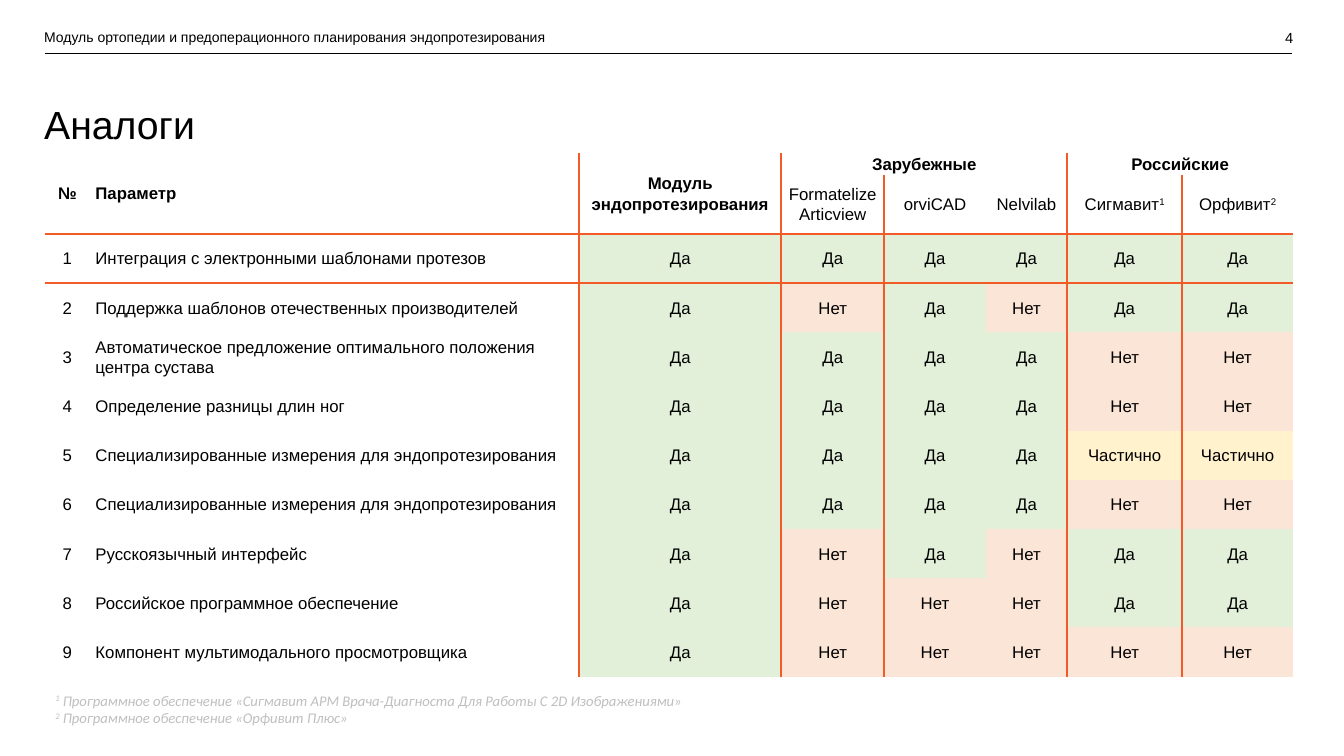
from lxml.etree import SubElement as add_node
from pptx import Presentation
from pptx.dml.color import RGBColor
from pptx.enum.shapes import MSO_CONNECTOR as Connector
from pptx.enum.text import MSO_ANCHOR as Anchor, PP_ALIGN as Align
from pptx.oxml import parse_xml
from pptx.oxml.ns import nsdecls, qn
from pptx.util import Pt

ORANGE = "F25A28"
ANSWERS = {"+": ("Да", "E2F0D9"), "-": ("Нет", "FBE5D6"), "~": ("Частично", "FFF2CC")}

COLUMN_WIDTHS = [31.5, 349.9, 144.3, 73.6, 72.5, 58.2, 82.1, 79.3]
ROW_HEIGHTS = [15.4, 42.1] + [35.15] * 9

# Header cells: row, column, last row, last column, text
HEADERS = [
    (0, 0, 1, 0, "№"),
    (0, 1, 1, 1, "Параметр"),
    (0, 2, 1, 2, "Модуль эндопротезирования"),
    (0, 3, 0, 5, "Зарубежные"),
    (0, 6, 0, 7, "Российские"),
    (1, 3, 1, 3, "Formatelize Articview"),
    (1, 4, 1, 4, "orviCAD"),
    (1, 5, 1, 5, "Nelvilab"),
    (1, 6, 1, 6, "Сигмавит^1"),
    (1, 7, 1, 7, "Орфивит^2"),
]

# One answer sign for each product column
PARAMETERS = [
    ("Интеграция с электронными шаблонами протезов", "++++++"),
    ("Поддержка шаблонов отечественных производителей", "+-+-++"),
    ("Автоматическое предложение оптимального положения центра сустава", "++++--"),
    ("Определение разницы длин ног", "++++--"),
    ("Специализированные измерения для эндопротезирования", "++++~~"),
    ("Специализированные измерения для эндопротезирования", "++++--"),
    ("Русскоязычный интерфейс", "+-+-++"),
    ("Российское программное обеспечение", "+---++"),
    ("Компонент мультимодального просмотровщика", "+-----"),
]

FOOTNOTES = [
    "^1 Программное обеспечение «Сигмавит АРМ Врача-Диагноста Для Работы С 2D Изображениями»",
    "^2 Программное обеспечение «Орфивит Плюс»",
]


def color(value):
    return RGBColor.from_string(value)


def add_span(para, text, font, tint, raised=False):
    span = para.add_run()
    span.text = text
    for name, value in font.items():
        setattr(span.font, name, value)
    span.font.color.rgb = color(tint)
    if raised:
        span.font._element.set("baseline", "30000")


def write(para, text, font, tint="000000", **layout):
    """Fill a paragraph; the character after ^ is raised."""
    for name, value in layout.items():
        setattr(para, name, value)
    before, mark, after = text.partition("^")
    if before:
        add_span(para, before, font, tint)
    if mark:
        add_span(para, after[0], font, tint, raised=True)
        if after[1:]:
            add_span(para, after[1:], font, tint)


def add_text(page, place, lines, font, tint="000000", anchor=Anchor.TOP, **layout):
    box = page.shapes.add_textbox(*map(Pt, place))
    frame = box.text_frame
    frame.word_wrap = True
    frame.vertical_anchor = anchor
    for index, line in enumerate(lines):
        para = frame.add_paragraph() if index else frame.paragraphs[0]
        write(para, line, font, tint, **layout)


def add_rule(page, left, right, top):
    rule = page.shapes.add_connector(Connector.STRAIGHT, Pt(left), Pt(top), Pt(right), Pt(top))
    rule.line.color.rgb = color("000000")
    rule.line.width = Pt(0.5)
    add_node(rule._element.spPr, qn("a:effectLst"))


def line_right_of(row, column):
    return column in (1, 2, 5) or (column in (3, 6) and row > 0)


def line_below(row):
    return row in (1, 2)


def set_borders(cell, row, column, last_row, last_column):
    sides = {
        "L": line_right_of(row, column - 1),
        "R": line_right_of(row, last_column),
        "T": line_below(row - 1),
        "B": line_below(last_row),
    }
    props = cell._tc.get_or_add_tcPr()
    for index, (side, visible) in enumerate(sides.items()):
        paint = f'<a:solidFill><a:srgbClr val="{ORANGE}"/></a:solidFill>' if visible else "<a:noFill/>"
        width = Pt(1.5) if visible else 0
        border = f'<a:ln{side} {nsdecls("a")} w="{width}">{paint}</a:ln{side}>'
        props.insert(index, parse_xml(border))


def style_cell(cell, text, align, fill=None, bold=False):
    layout = {"margin_left": Pt(4.3), "margin_right": Pt(4.3), "margin_top": 0,
              "margin_bottom": 0, "vertical_anchor": Anchor.MIDDLE}
    for name, value in layout.items():
        setattr(cell, name, value)
    if fill:
        cell.fill.solid()
        cell.fill.fore_color.rgb = color(fill)
    else:
        cell.fill.background()
    font = {"name": "Arial", "size": Pt(12), "bold": bold}
    write(cell.text_frame.paragraphs[0], text, font, alignment=align, line_spacing=1.07)


def add_comparison(page, left, top):
    rows, columns = len(ROW_HEIGHTS), len(COLUMN_WIDTHS)
    size = Pt(sum(COLUMN_WIDTHS)), Pt(sum(ROW_HEIGHTS))
    table = page.shapes.add_table(rows, columns, Pt(left), Pt(top), *size).table
    table.first_row = table.horz_banding = False
    for column, width in zip(table.columns, COLUMN_WIDTHS):
        column.width = Pt(width)
    for row, height in zip(table.rows, ROW_HEIGHTS):
        row.height = Pt(height)

    # Header
    ends = {}
    for row, column, last_row, last_column, text in HEADERS:
        cell = table.cell(row, column)
        if (row, column) != (last_row, last_column):
            cell.merge(table.cell(last_row, last_column))
        ends[row, column] = last_row, last_column
        align = Align.LEFT if column == 1 else Align.CENTER
        style_cell(cell, text, align, bold=row == 0)

    # Parameters and answers
    for number, (parameter, signs) in enumerate(PARAMETERS, 1):
        row = number + 1
        style_cell(table.cell(row, 0), str(number), Align.CENTER)
        style_cell(table.cell(row, 1), parameter, Align.LEFT)
        for column, sign in enumerate(signs, 2):
            answer, fill = ANSWERS[sign]
            style_cell(table.cell(row, column), answer, Align.CENTER, fill)

    # Borders
    for row in range(rows):
        for column in range(columns):
            cell = table.cell(row, column)
            if cell.is_spanned:
                cell.fill.background()
            set_borders(cell, row, column, *ends.get((row, column), (row, column)))


def main():
    deck = Presentation()
    deck.slide_width, deck.slide_height = Pt(960), Pt(540)
    page = deck.slides.add_slide(deck.slide_layouts[6])

    # Title and running head
    add_text(page, (24.5, 38.4, 902, 104.4), ["Аналоги"], {"name": "Arial", "size": Pt(28)},
             anchor=Anchor.MIDDLE, line_spacing=0.9)
    add_text(page, (24.5, 16.9, 480, 19.4),
             ["Модуль ортопедии и предоперационного планирования эндопротезирования"],
             {"name": "Arial", "size": Pt(10)})
    add_rule(page, 32.4, 923, 38.2)
    add_text(page, (887, 17.3, 43.9, 20.9), ["4"], {"name": "Arial", "size": Pt(10.5)},
             alignment=Align.RIGHT)

    # Comparison and footnotes
    add_comparison(page, 32.4, 109.4)
    add_text(page, (32.4, 490.3, 511, 32.4), FOOTNOTES,
             {"name": "Calibri", "size": Pt(10.5), "italic": True}, "BFBFBF")

    deck.save("out.pptx")


if __name__ == "__main__":
    main()
